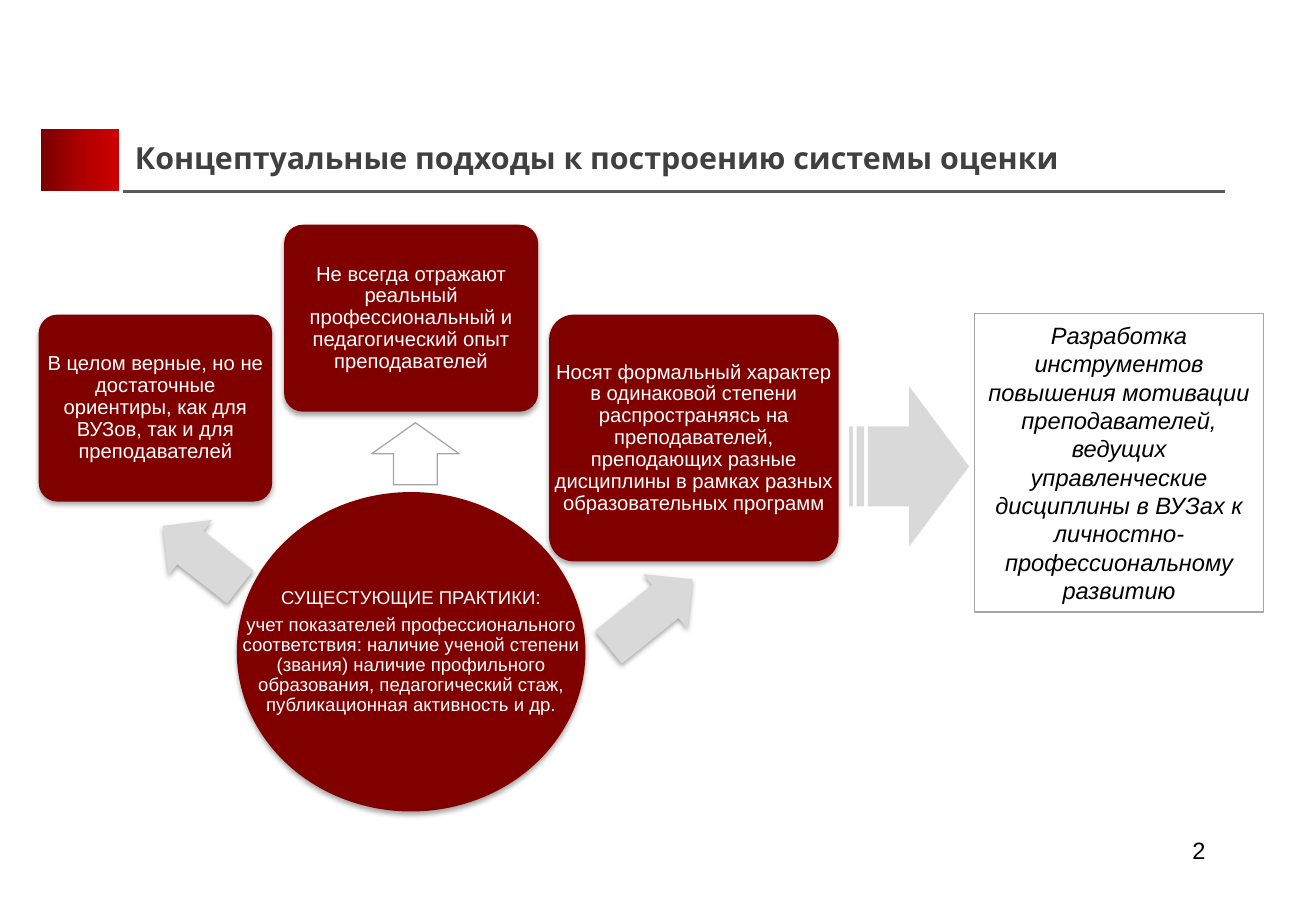
from copy import deepcopy

from pptx import Presentation
from pptx.dml.color import RGBColor as Rgb
from pptx.enum.shapes import MSO_CONNECTOR as Link, MSO_SHAPE as Kind
from pptx.enum.text import MSO_ANCHOR as Anchor, PP_ALIGN as Align
from pptx.oxml import parse_xml
from pptx.oxml.ns import nsdecls, qn
from pptx.util import Cm, Pt

HUES = {
    "maroon": "800000",
    "gray": "D9D9D9",
    "edge": "A6A6A6",
    "rule": "595959",
    "title": "404040",
    "white": "FFFFFF",
    "black": "000000",
}
FADE = [(0, "770000"), (0.5, "AD0000"), (1, "CE0000")]
SHADE = (
    f'<a:effectLst {nsdecls("a")}>'
    '<a:outerShdw blurRad="40000" dist="23000" dir="5400000" rotWithShape="0">'
    '<a:srgbClr val="000000"><a:alpha val="35000"/></a:srgbClr>'
    "</a:outerShdw></a:effectLst>"
)
CARDS = [
    ((0.81, 6.58, 4.88, 3.91),
     "В целом верные, но не достаточные ориентиры, как для ВУЗов, "
     "так и для преподавателей"),
    ((5.94, 4.7, 5.31, 3.91),
     "Не всегда отражают реальный профессиональный и педагогический опыт "
     "преподавателей"),
    ((11.48, 6.58, 6.05, 5.16),
     "Носят формальный характер в одинаковой степени распространяясь на "
     "преподавателей, преподающих разные дисциплины в рамках разных "
     "образовательных программ"),
]
ARROWS = [
    ((3.18, 10.9, 2.06, 1.47), 38.2),
    ((12.47, 12.09, 2.26, 1.47), 141.1),
]
PRACTICE = [
    "СУЩЕСТУЮЩИЕ ПРАКТИКИ:",
    "учет показателей профессионального соответствия: наличие ученой степени "
    "(звания) наличие профильного образования, педагогический стаж, "
    "публикационная активность и др.",
]
GOAL = (
    "Разработка инструментов повышения мотивации преподавателей, ведущих "
    "управленческие дисциплины в ВУЗах к личностно-профессиональному развитию"
)


def color(name):
    return Rgb.from_string(HUES[name])


def lengths(box):
    return [Cm(side) for side in box]


def add_form(slide, kind, box, fill=None, edge=None, shade=False):
    form = slide.shapes.add_shape(kind, *lengths(box))
    form.shadow.inherit = False
    if fill:
        form.fill.solid()
        form.fill.fore_color.rgb = color(fill)
    else:
        form.fill.background()
    if edge:
        form.line.color.rgb = color(edge)
        form.line.width = Pt(0.75)
    else:
        form.line.fill.background()
    if shade:
        props = form._element.spPr
        props.replace(props.find(qn("a:effectLst")), parse_xml(SHADE))
    return form


def write(form, lines, size, hue, align=Align.CENTER, font="Arial",
          bold=False, italic=False, tight=False):
    frame = form.text_frame
    frame.word_wrap = True
    frame.text = "\n".join(lines)
    for part in frame.paragraphs:
        part.alignment = align
        part.font.name = font
        part.font.size = Pt(size)
        part.font.bold = bold
        part.font.italic = italic
        part.font.color.rgb = color(hue)
        if tight:
            part.line_spacing = 0.9
            part.space_after = Pt(size * 0.35)
    return frame


def add_text(slide, box, *args, **style):
    return write(slide.shapes.add_textbox(*lengths(box)), *args, **style)


def add_node(slide, kind, box, lines, size, inset):
    form = add_form(slide, kind, box, "maroon", shade=True)
    if kind == Kind.ROUNDED_RECTANGLE:
        form.adjustments[0] = 0.1
    frame = add_text(slide, box, lines, size, "white", tight=True)
    frame.vertical_anchor = Anchor.MIDDLE
    frame.margin_left = frame.margin_right = Cm(inset)
    frame.margin_top = frame.margin_bottom = Cm(inset)


def add_arrow(slide, box, angle):
    arrow = add_form(slide, Kind.LEFT_ARROW, box, "gray", shade=True)
    arrow.adjustments[0] = 0.6
    arrow.rotation = angle


def add_badge(slide, box):
    badge = add_form(slide, Kind.RECTANGLE, box)
    badge.fill.gradient()
    badge.fill.gradient_angle = 0
    stops = badge._element.spPr.find(qn("a:gradFill")).find(qn("a:gsLst"))
    stops.insert(1, deepcopy(stops[0]))
    for stop, (place, shade) in zip(badge.fill.gradient_stops, FADE):
        stop.position = place
        stop.color.rgb = Rgb.from_string(shade)


def add_rule(slide, left, right, top):
    ends = lengths((left, top, right, top))
    rule = slide.shapes.add_connector(Link.STRAIGHT, *ends)
    rule.line.color.rgb = color("rule")
    rule.line.width = Pt(1.5)
    rule._element.spPr.append(parse_xml(f'<a:effectLst {nsdecls("a")}/>'))


def main():
    deck = Presentation()
    deck.slide_width, deck.slide_height = Cm(27.51), Cm(19.05)
    slide = deck.slides.add_slide(deck.slide_layouts[6])

    add_text(slide, (2.57, 2.79, 22.53, 1.02),
             ["Концептуальные подходы к построению системы оценки"],
             18, "title", align=Align.LEFT, font="Karla", bold=True)
    add_rule(slide, 2.57, 25.6, 4.01)
    add_badge(slide, (0.86, 2.69, 1.63, 1.3))
    add_text(slide, (19.71, 17.35, 5.74, 1.27), ["2"], 14, "black",
             align=Align.RIGHT)

    add_node(slide, Kind.OVAL, (4.95, 10.29, 7.29, 6.68), PRACTICE, 11, 0.03)
    for box, angle in ARROWS:
        add_arrow(slide, box, angle)
    for box, text in CARDS:
        add_node(slide, Kind.ROUNDED_RECTANGLE, box, [text], 12, 0.08)

    add_form(slide, Kind.STRIPED_RIGHT_ARROW, (17.75, 8.08, 2.51, 3.35), "gray")
    goal = add_form(slide, Kind.RECTANGLE, (20.37, 6.55, 6.05, 6.25),
                    edge="edge")
    write(goal, [GOAL], 14, "black", italic=True)
    add_form(slide, Kind.UP_ARROW, (7.77, 8.84, 1.83, 1.3), edge="edge")
    deck.save("out.pptx")


if __name__ == "__main__":
    main()
